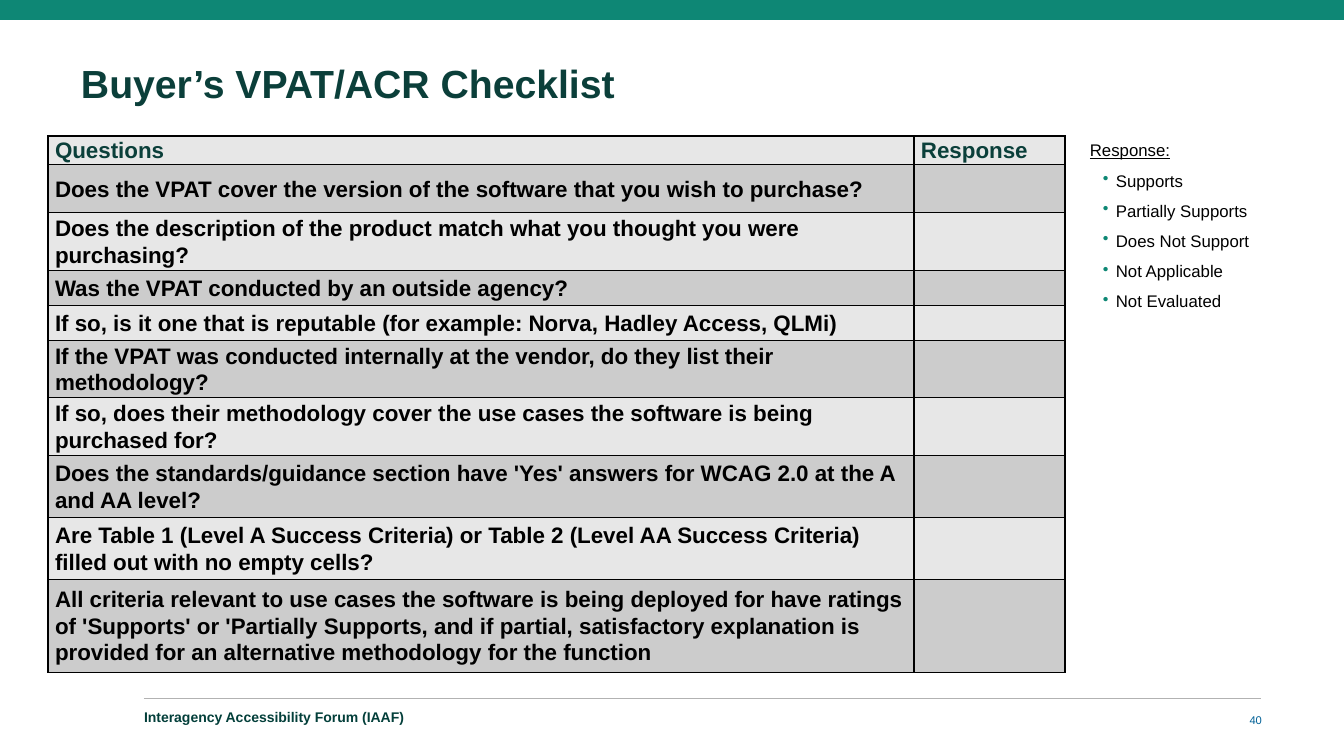
from lxml.etree import SubElement
from pptx import Presentation
from pptx.dml.color import RGBColor
from pptx.enum.shapes import MSO_CONNECTOR, MSO_SHAPE
from pptx.enum.text import MSO_ANCHOR, PP_ALIGN
from pptx.oxml.ns import qn
from pptx.util import Pt

PX = 914400 / 100.8
HUES = {"band": "0E8775", "rule": "B2B2B2", "foot": "033F3A", "head": "0B3F3A",
        "ink": "000000", "light": "E7E7E7", "dark": "CCCCCC",
        "dot": "0D8774", "page": "006197"}


def px(*sizes):
    """Turn pixel lengths into EMU."""
    return [round(size * PX) for size in sizes]


def write(para, text, hue, spacing=1.0, **style):
    para.line_spacing = spacing
    run = para.add_run()
    run.text = text
    run.font.name = "Arial"
    run.font.color.rgb = RGBColor.from_string(HUES[hue])
    for name, value in style.items():
        setattr(run.font, name, value)


deck = Presentation()
deck.slide_width, deck.slide_height = px(1344, 756)
slide = deck.slides.add_slide(deck.slide_layouts[6])
shapes = slide.shapes

band = shapes.add_shape(MSO_SHAPE.RECTANGLE, *px(0, 0, 1344, 20))
band.shadow.inherit = False
band.fill.solid()
band.fill.fore_color.rgb = RGBColor.from_string(HUES["band"])
band.line.fill.background()

rule = shapes.add_connector(MSO_CONNECTOR.STRAIGHT, *px(144, 699, 1261, 699))
rule.line.color.rgb = RGBColor.from_string(HUES["rule"])
rule.line.width = Pt(0.75)
SubElement(rule._element.spPr, qn("a:effectLst"))

# Title, footer and page number
labels = [
    ((81, 60, 1182, 47), 5, MSO_ANCHOR.TOP, PP_ALIGN.LEFT, "Buyer’s VPAT/ACR Checklist",
     dict(hue="head", spacing=0.9, size=Pt(28), bold=True)),
    ((144, 710, 707, 19), 0, MSO_ANCHOR.MIDDLE, PP_ALIGN.LEFT,
     "Interagency Accessibility Forum (IAAF)",
     dict(hue="foot", spacing=0.5, size=Pt(10), bold=True)),
    ((1204, 710, 58, 20), 0, MSO_ANCHOR.MIDDLE, PP_ALIGN.RIGHT, "40",
     dict(hue="page", size=Pt(8))),
]
for place, top, anchor, align, text, style in labels:
    frame = shapes.add_textbox(*px(*place)).text_frame
    frame.word_wrap = True
    frame.vertical_anchor = anchor
    frame.margin_left = frame.margin_right = frame.margin_bottom = 0
    frame.margin_top = px(top)[0]
    frame.paragraphs[0].alignment = align
    write(frame.paragraphs[0], text, **style)

# Checklist table
rows = [
    (28, "Questions", "Response"),
    (48, "Does the VPAT cover the version of the software that you wish to purchase?", ""),
    (53, "Does the description of the product match what you thought you were purchasing?", ""),
    (35, "Was the VPAT conducted by an outside agency?", ""),
    (35, "If so, is it one that is reputable (for example: Norva, Hadley Access, QLMi)", ""),
    (53, "If the VPAT was conducted internally at the vendor, do they list their methodology?", ""),
    (55, "If so, does their methodology cover the use cases the software is being "
         "purchased for?", ""),
    (62, "Does the standards/guidance section have 'Yes' answers for WCAG 2.0 at the A "
         "and AA level?", ""),
    (62, "Are Table 1 (Level A Success Criteria) or Table 2 (Level AA Success Criteria) "
         "filled out with no empty cells?", ""),
    (93, "All criteria relevant to use cases the software is being deployed for have ratings "
         "of 'Supports' or 'Partially Supports, and if partial, satisfactory explanation is "
         "provided for an alternative methodology for the function", ""),
]
tall = sum(row[0] for row in rows)
table = shapes.add_table(len(rows), 2, *px(48, 136, 1017, tall)).table
for column, width in zip(table.columns, px(866, 151)):
    column.width = width
for r, (height, *texts) in enumerate(rows):
    table.rows[r].height = px(height)[0]
    for c, text in enumerate(texts):
        cell = table.cell(r, c)
        cell.vertical_anchor = MSO_ANCHOR.MIDDLE
        cell.margin_left = cell.margin_right = px(7)[0]
        cell.margin_top = cell.margin_bottom = 0
        for side in ("lnL", "lnR", "lnT", "lnB"):
            edge = SubElement(cell._tc.get_or_add_tcPr(), qn("a:" + side), w=str(Pt(1)))
            paint = SubElement(edge, qn("a:solidFill"))
            SubElement(paint, qn("a:srgbClr"), val=HUES["ink"])
        cell.fill.solid()
        cell.fill.fore_color.rgb = RGBColor.from_string(HUES["dark" if r % 2 else "light"])
        if text:
            write(cell.text_frame.paragraphs[0], text, "ink" if r else "head", 1.07,
                  size=Pt(16), bold=True)

# Response key
frame = shapes.add_textbox(*px(1080, 125, 248, 190)).text_frame
frame.word_wrap = True
write(frame.paragraphs[0], "Response:", "ink", 1.5, size=Pt(12), underline=True)
for text in ("Supports", "Partially Supports", "Does Not Support",
             "Not Applicable", "Not Evaluated"):
    para = frame.add_paragraph()
    para.level = 1
    props = para._p.get_or_add_pPr()
    left, hang = px(26, -13)
    props.set("marL", str(left))
    props.set("indent", str(hang))
    SubElement(SubElement(props, qn("a:buClr")), qn("a:srgbClr"), val=HUES["dot"])
    SubElement(props, qn("a:buChar"), char="•")
    write(para, text, "ink", 1.5, size=Pt(12))

deck.save("out.pptx")
